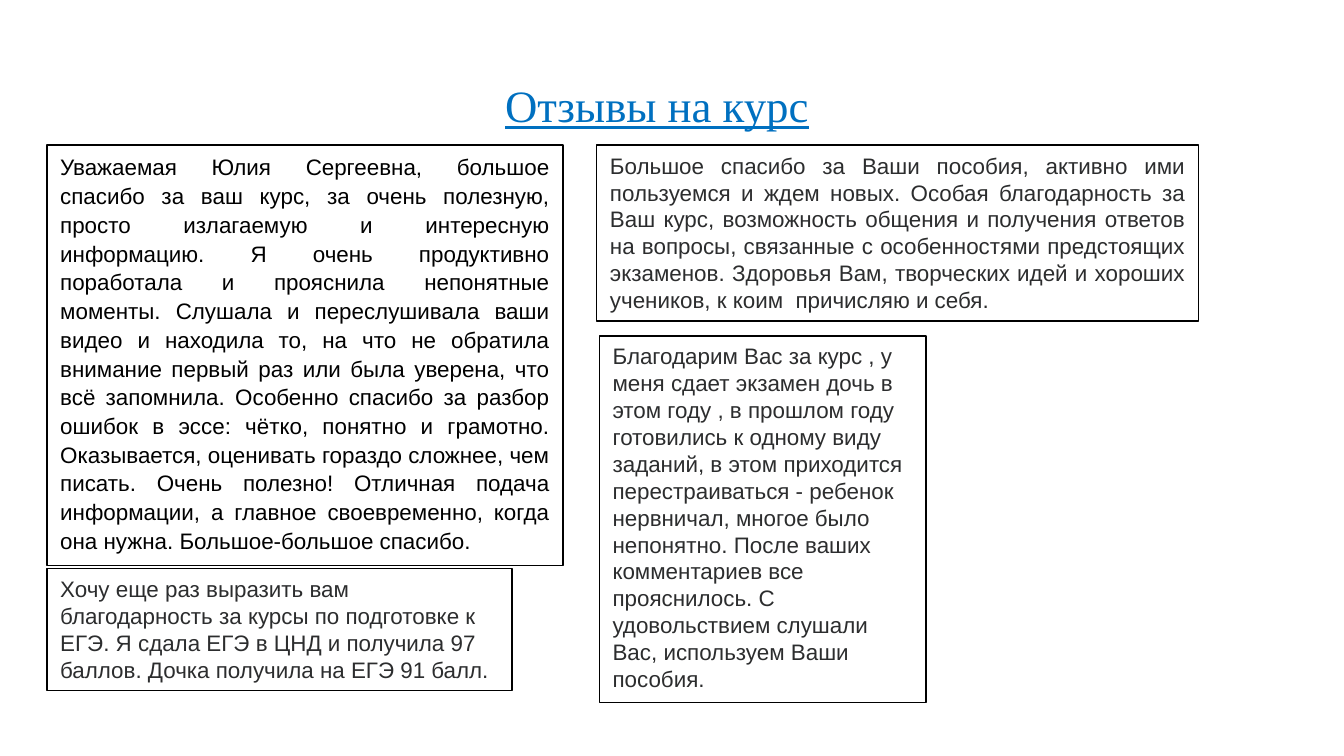
"""Build a slide of course reviews."""
from pptx import Presentation
from pptx.dml.color import RGBColor
from pptx.enum.shapes import MSO_SHAPE
from pptx.enum.text import MSO_ANCHOR, MSO_AUTO_SIZE, PP_ALIGN
from pptx.util import Inches, Pt

RECTANGLE = MSO_SHAPE.RECTANGLE
JUSTIFY = PP_ALIGN.JUSTIFY
LEFT = PP_ALIGN.LEFT

COLORS = {"title": "0070C0", "black": "000000", "review": "2C2D2E"}
FRAME = {"word_wrap": True, "auto_size": MSO_AUTO_SIZE.SHAPE_TO_FIT_TEXT,
         "vertical_anchor": MSO_ANCHOR.TOP}
TITLE_FONT = {"name": "Times New Roman", "size": Pt(24), "underline": True}
REVIEW_FONT = {"name": "Arial", "size": Pt(12)}
SPACED = {"alignment": JUSTIFY, "line_spacing": 1.07, "space_after": Pt(8)}

REVIEWS = [
    ((0.35, 1.08, 3.84, 3.13), "black", SPACED,
     "Уважаемая Юлия Сергеевна, большое спасибо за ваш курс, за очень полезную, "
     "просто излагаемую и интересную информацию. Я очень продуктивно поработала "
     "и прояснила непонятные моменты. Слушала и переслушивала ваши видео и "
     "находила то, на что не обратила внимание первый раз или была уверена, что "
     "всё запомнила. Особенно спасибо за разбор ошибок в эссе: чётко, понятно и "
     "грамотно. Оказывается, оценивать гораздо сложнее, чем писать. Очень "
     "полезно! Отличная подача информации, а главное своевременно, когда она "
     "нужна. Большое-большое спасибо."),
    ((4.44, 1.08, 4.48, 1.31), "review", {"alignment": JUSTIFY},
     "Большое спасибо за Ваши пособия, активно ими пользуемся и ждем новых. "
     "Особая благодарность за Ваш курс, возможность общения и получения ответов "
     "на вопросы, связанные с особенностями предстоящих экзаменов. Здоровья Вам, "
     "творческих идей и хороших учеников, к коим  причисляю и себя."),
    ((4.46, 2.5, 2.43, 2.73), "review", {"alignment": LEFT},
     "Благодарим Вас за курс , у меня сдает экзамен дочь в этом году , в прошлом "
     "году готовились к одному виду заданий, в этом приходится перестраиваться - "
     "ребенок нервничал, многое было непонятно. После ваших комментариев все "
     "прояснилось. С удовольствием слушали Вас, используем Ваши пособия."),
    ((0.35, 4.23, 3.46, 0.91), "review", {"alignment": LEFT},
     "Хочу еще раз выразить вам благодарность за курсы по подготовке к ЕГЭ. Я "
     "сдала ЕГЭ в ЦНД и получила 97 баллов. Дочка получила на ЕГЭ 91 балл. "),
]


def apply_format(target, values):
    """Set each attribute of the target from a dict of values."""
    for name, value in values.items():
        setattr(target, name, value)


def write_text(shape, text, color, font_format, paragraph_format):
    """Write one formatted paragraph into a shape."""
    apply_format(shape.text_frame, FRAME)
    paragraph = shape.text_frame.paragraphs[0]
    apply_format(paragraph, paragraph_format)
    run = paragraph.add_run()
    run.text = text
    apply_format(run.font, font_format)
    run.font.color.rgb = RGBColor.from_string(COLORS[color])


def add_title(slide, bounds, text):
    """Add the underlined slide title."""
    shape = slide.shapes.add_textbox(*map(Inches, bounds))
    write_text(shape, text, "title", TITLE_FONT, {"alignment": JUSTIFY})


def add_review(slide, bounds, color, paragraph_format, text):
    """Add a review in an unfilled rectangle with a thin black line."""
    shape = slide.shapes.add_shape(RECTANGLE, *map(Inches, bounds))
    shape.shadow.inherit = False
    shape.fill.background()
    shape.line.color.rgb = RGBColor.from_string(COLORS["black"])
    shape.line.width = Pt(0.75)
    write_text(shape, text, color, REVIEW_FONT, paragraph_format)


def main():
    """Build and save the presentation."""
    presentation = Presentation()
    presentation.slide_width = Inches(10)
    presentation.slide_height = presentation.slide_width * 9 // 16
    slide = presentation.slides.add_slide(presentation.slide_layouts[6])
    for review in REVIEWS:
        add_review(slide, *review)
    add_title(slide, (3.66, 0.53, 3.54, 0.5), "Отзывы на курс")
    presentation.save("out.pptx")


if __name__ == "__main__":
    main()
